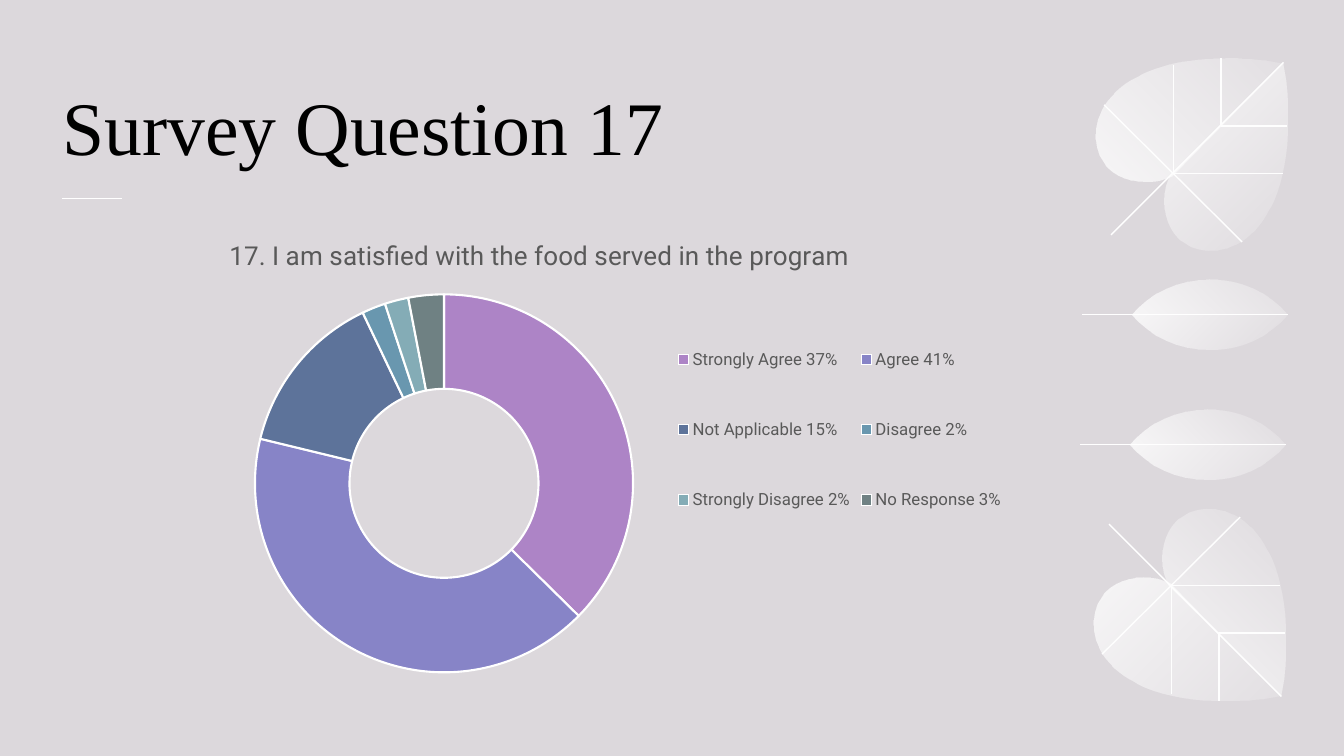
from dataclasses import dataclass

from lxml import etree
from pptx import Presentation
from pptx.chart.data import CategoryChartData
from pptx.dml.color import RGBColor
from pptx.enum.chart import XL_CHART_TYPE, XL_LEGEND_POSITION
from pptx.enum.shapes import MSO_CONNECTOR
from pptx.enum.text import MSO_ANCHOR, MSO_AUTO_SIZE, PP_ALIGN
from pptx.oxml.ns import qn
from pptx.util import Inches, Pt

DOUGHNUT = XL_CHART_TYPE.DOUGHNUT
LEGEND_RIGHT = XL_LEGEND_POSITION.RIGHT
STRAIGHT = MSO_CONNECTOR.STRAIGHT
BOTTOM = MSO_ANCHOR.BOTTOM
NO_AUTOFIT = MSO_AUTO_SIZE.NONE
LEFT = PP_ALIGN.LEFT

COLORS = {
    "background": "DCD8DC",
    "title": "000000",
    "chart text": "595959",
    "white": "FFFFFF",
}
TITLE_FONT = "Times New Roman"
CHART_FONT = "Roboto"

QUESTION = "17. I am satisfied with the food served in the program"
ANSWERS = [
    ("Strongly Agree 37%", 37, "AD84C6"),
    ("Agree 41%", 41, "8784C7"),
    ("Not Applicable 15%", 14, "5D739A"),
    ("Disagree 2%", 2, "6997AF"),
    ("Strongly Disagree 2%", 2, "84ACB6"),
    ("No Response 3%", 3, "6F8183"),
]

HEART_DIAGONAL = 2.05
HEART_HALF = [
    [(1.99, 0.06), (0.89, 1.17)],
    [(0.89, 1.17), (0.78, 1.21)],
    [(0.78, 1.21), (0.56, 1.26), (0.38, 1.2), (0.26, 1.09)],
    [(0.26, 1.09), (0.25, 1.08), (0.23, 1.06), (0.22, 1.04)],
    [(0.22, 1.04), (-0.06, 0.67), (0.28, -0.13), (1.82, 0.03)],
]
HEART_VEINS = [[(2, 0.05), (0.29, 1.76)], [(0.22, 0.47), (1.59, 1.83)]]
HEART_ELBOWS = [
    [(0.91, 0.07), (0.91, 1.15), (1.99, 1.15)],
    [(1.38, 0.01), (1.38, 0.68), (2.04, 0.68)],
]
STEM_LEVEL = 2.55
BLADE_HALF = [
    [(1.26, 2.2), (0.96, 2.2), (0.68, 2.33), (0.49, 2.55)],
    [(0.49, 2.55), (2.04, 2.55)],
    [(2.04, 2.55), (1.85, 2.33), (1.58, 2.2), (1.26, 2.2)],
]


@dataclass
class Box:
    left: float
    top: float
    width: float
    height: float
    flipped: bool = False

    def place(self, point):
        x, y = point
        y = self.height - y if self.flipped else y
        return Inches(self.left + x), Inches(self.top + y)

    def edges(self):
        return [Inches(v) for v in (self.left, self.top, self.width, self.height)]


def rgb(value):
    return RGBColor.from_string(value)


def style_font(font, name, size, color):
    font.name, font.size, font.bold = name, Pt(size), False
    font.color.rgb = rgb(color)


def add_outline(slide, box, points, close):
    start, *others = [box.place(point) for point in points]
    builder = slide.shapes.build_freeform(*start)
    builder.add_line_segments(others, close=close)
    outline = builder.convert_to_shape()
    outline.shadow.inherit = False
    return outline


def bend_edges(petal, box, segments):
    edges = list(petal._element.spPr.iter(qn("a:lnTo")))
    for edge, segment in zip(edges, segments):
        if len(segment) == 2:
            continue
        bend = etree.Element(qn("a:cubicBezTo"))
        for point in segment[1:]:
            x, y = box.place(point)
            etree.SubElement(bend, qn("a:pt"), x=str(x - petal.left), y=str(y - petal.top))
        edge.getparent().replace(edge, bend)


def add_petal(slide, box, segments, angle, end_opacity):
    corners = [segments[0][0]] + [segment[-1] for segment in segments]
    petal = add_outline(slide, box, corners, True)
    bend_edges(petal, box, segments)
    petal.line.fill.background()
    petal.fill.gradient()
    petal.fill.gradient_angle = 360 - angle if box.flipped else angle
    for stop in petal.fill.gradient_stops:
        stop.color.rgb = rgb(COLORS["white"])
    for color, opacity in zip(petal._element.spPr.iter(qn("a:srgbClr")), (80, end_opacity)):
        etree.SubElement(color, qn("a:alpha"), val=str(opacity * 1000))


def add_vein(slide, box, start, end):
    vein = slide.shapes.add_connector(STRAIGHT, *box.place(start), *box.place(end))
    vein.line.color.rgb = rgb(COLORS["white"])
    vein.line.width = Pt(1)
    etree.SubElement(vein._element.spPr, qn("a:effectLst"))


def add_leaf_pair(slide, box):
    for start, end in HEART_VEINS:
        add_vein(slide, box, start, end)
    for points in HEART_ELBOWS:
        elbow = add_outline(slide, box, points, False)
        elbow.fill.background()
        elbow.line.color.rgb = rgb(COLORS["white"])
        elbow.line.width = Pt(1)
    heart_mirror = [[(HEART_DIAGONAL - y, HEART_DIAGONAL - x) for x, y in segment]
                    for segment in HEART_HALF]
    blade_mirror = [[(x, 2 * STEM_LEVEL - y) for x, y in segment]
                    for segment in BLADE_HALF]
    for upper, lower in ((HEART_HALF, heart_mirror), (BLADE_HALF, blade_mirror)):
        add_petal(slide, box, upper, 45, 20)
        add_petal(slide, box, lower, 315, 10)
    add_vein(slide, box, (0, STEM_LEVEL), (2.04, STEM_LEVEL))


def add_heading(slide, box):
    heading = slide.shapes.title
    heading.left, heading.top, heading.width, heading.height = box.edges()
    frame = heading.text_frame
    frame.text = "Survey Question 17"
    frame.word_wrap = True
    frame.auto_size = NO_AUTOFIT
    frame.vertical_anchor = BOTTOM
    frame.margin_left = 0
    paragraph = frame.paragraphs[0]
    paragraph.alignment = LEFT
    style_font(paragraph.font, TITLE_FONT, 54, COLORS["title"])
    add_vein(slide, box, (0, 1.53), (0.59, 1.53))


def set_layout(element, index, **fractions):
    for old in element.findall(qn("c:layout")):
        element.remove(old)
    layout = etree.Element(qn("c:layout"))
    manual = etree.SubElement(layout, qn("c:manualLayout"))
    if "plotArea" in element.tag:
        etree.SubElement(manual, qn("c:layoutTarget"), val="inner")
    for axis in "xy":
        etree.SubElement(manual, qn(f"c:{axis}Mode"), val="edge")
    for side, fraction in fractions.items():
        etree.SubElement(manual, qn(f"c:{side}"), val=str(fraction))
    element.insert(index, layout)


def add_answers_chart(slide, box):
    data = CategoryChartData()
    data.categories = [answer for answer, _, _ in ANSWERS]
    data.add_series(QUESTION, [share for _, share, _ in ANSWERS])
    chart = slide.shapes.add_chart(DOUGHNUT, *box.edges(), data).chart
    style_font(chart.font, CHART_FONT, 10, COLORS["title"])

    chart.has_title = True
    question = chart.chart_title.text_frame
    question.text = QUESTION
    style_font(question.paragraphs[0].font, CHART_FONT, 18.6, COLORS["chart text"])
    set_layout(chart.chart_title._element, 1, x=0.17, y=0.03)

    chart.has_legend = True
    chart.legend.position = LEGEND_RIGHT
    chart.legend.include_in_layout = False
    style_font(chart.legend.font, CHART_FONT, 12, COLORS["chart text"])
    set_layout(chart.legend._element, 1, x=0.64, y=0.17, w=0.35, h=0.56)

    ring = chart.plots[0]
    ring.vary_by_categories = True
    ring.has_data_labels = False
    ring._element.find(qn("c:holeSize")).set("val", "75")
    set_layout(ring._element.getparent(), 0, x=0.2, y=0.16, w=0.4, h=0.81)
    for index, (_, _, color) in enumerate(ANSWERS):
        slice_format = ring.series[0].points[index].format
        slice_format.fill.solid()
        slice_format.fill.fore_color.rgb = rgb(color)
        slice_format.line.color.rgb = rgb(COLORS["white"])
        slice_format.line.width = Pt(1.5)


def main():
    deck = Presentation()
    deck.slide_width, deck.slide_height = Inches(13.33), Inches(7.5)
    slide = deck.slides.add_slide(deck.slide_layouts[5])
    slide.background.fill.solid()
    slide.background.fill.fore_color.rgb = rgb(COLORS["background"])
    add_leaf_pair(slide, Box(10.73, 0.57, 2.06, 2.9))
    add_leaf_pair(slide, Box(10.71, 4.06, 2.06, 2.9, flipped=True))
    add_heading(slide, Box(0.62, 0.44, 9.46, 1.3))
    add_answers_chart(slide, Box(0.62, 2.18, 9.46, 4.63))
    deck.save("out.pptx")


if __name__ == "__main__":
    main()
